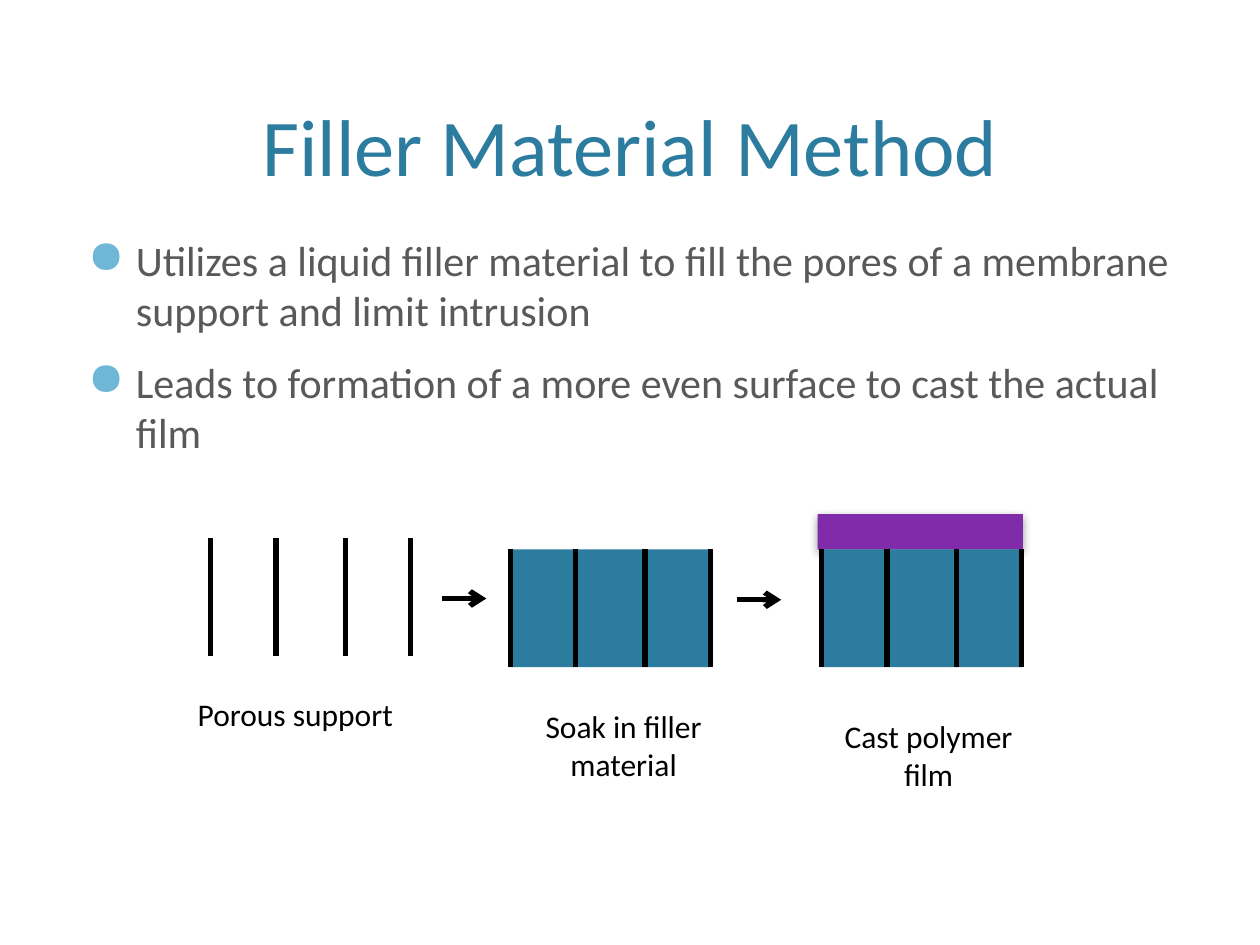
from dataclasses import dataclass

from lxml.etree import SubElement
from pptx import Presentation
from pptx.dml.color import RGBColor
from pptx.enum.shapes import MSO_CONNECTOR as Connector, MSO_SHAPE as Shape
from pptx.enum.text import MSO_ANCHOR as Anchor, PP_ALIGN as Align
from pptx.oxml import parse_xml
from pptx.oxml.ns import nsdecls, qn
from pptx.util import Inches, Pt


@dataclass(frozen=True)
class Theme:
    font: str = "Calibri"
    teal: str = "2C7C9F"
    purple: str = "7F2BAA"
    gray: str = "595959"
    black: str = "000000"
    bullet: str = "6FB7D7"
    title_size: int = 46
    body_size: int = 24
    label_size: int = 18
    line_width: int = 3


theme = Theme()
presentation = Presentation()
presentation.slide_width, presentation.slide_height = Inches(10), Inches(7.5)
slide = presentation.slides.add_slide(presentation.slide_layouts[6])

# The slide is a grid of 100 columns by 75 rows.
COLUMN = presentation.slide_width / 100
ROW = presentation.slide_height / 75


def add_text(box, texts, size, color, align=Align.LEFT, anchor=Anchor.TOP):
    """Put one paragraph per text in a box given as left, top, width, height in grid cells."""
    left, top, width, height = box
    shape = slide.shapes.add_textbox(
        int(left * COLUMN), int(top * ROW), int(width * COLUMN), int(height * ROW))
    frame = shape.text_frame
    frame.word_wrap = True
    frame.vertical_anchor = anchor
    for index, text in enumerate(texts):
        paragraph = frame.paragraphs[0] if index == 0 else frame.add_paragraph()
        paragraph.alignment = align
        run = paragraph.add_run()
        run.text = text
        run.font.name = theme.font
        run.font.size = Pt(size)
        run.font.color.rgb = RGBColor.from_string(color)
    return frame


def add_line(start_column, start_row, end_column, end_row, arrow=False):
    connector = slide.shapes.add_connector(
        Connector.STRAIGHT,
        int(start_column * COLUMN), int(start_row * ROW),
        int(end_column * COLUMN), int(end_row * ROW))
    connector.line.color.rgb = RGBColor.from_string(theme.black)
    connector.line.width = Pt(theme.line_width)
    if arrow:
        SubElement(connector.line._get_or_add_ln(), qn("a:tailEnd"), type="arrow")
    SubElement(connector._element.spPr, qn("a:effectLst"))


# Title and bullets
add_text((6, 1.2, 88, 14.6), ["Filler Material Method"],
         theme.title_size, theme.teal, Align.CENTER, Anchor.BOTTOM)
body = add_text((6, 18.1, 88, 46.8), [
    "Utilizes a liquid filler material to fill the pores of a membrane support and limit intrusion",
    "Leads to formation of a more even surface to cast the actual film",
], theme.body_size, theme.gray)
for paragraph in body.paragraphs:
    paragraph.space_before = Pt(theme.body_size / 2)
    properties = paragraph._p.get_or_add_pPr()
    indent = Inches(0.38)
    properties.set("marL", str(indent))
    properties.set("indent", str(-indent))
    bullet_color = SubElement(properties, qn("a:buClr"))
    SubElement(bullet_color, qn("a:srgbClr"), val=theme.bullet)
    SubElement(properties, qn("a:buSzPct"), val="110000")
    SubElement(properties, qn("a:buChar"), char="●")

# Three stages: bare support, support with filler, filled support under a film
PORE_WALLS = (0, 5.2, 10.7, 15.9)
SUPPORT_WIDTH = PORE_WALLS[-1]
SUPPORT_HEIGHT = 9.35
FILM_HEIGHT, FILM_OVERHANG = 2.8, 0.3
stages = [
    (16.7, 42.7, False, False),
    (40.5, 43.6, True, False),
    (65.2, 43.6, True, True),
]
for left, top, has_filler, has_film in stages:
    layers = []
    if has_film:
        layers.append((left - FILM_OVERHANG, top - FILM_HEIGHT,
                       SUPPORT_WIDTH + 1.3 * FILM_OVERHANG, FILM_HEIGHT, theme.purple))
    if has_filler:
        layers.append((left, top, SUPPORT_WIDTH, SUPPORT_HEIGHT, theme.teal))
    for layer_left, layer_top, width, height, color in layers:
        layer = slide.shapes.add_shape(
            Shape.RECTANGLE, int(layer_left * COLUMN), int(layer_top * ROW),
            int(width * COLUMN), int(height * ROW))
        layer.shadow.inherit = False
        layer.fill.solid()
        layer.fill.fore_color.rgb = RGBColor.from_string(color)
        layer.line.fill.background()
        if color == theme.purple:
            layer._element.spPr.find(qn("a:effectLst")).append(parse_xml(
                f'<a:outerShdw {nsdecls("a")} blurRad="{Pt(5)}" dist="{Pt(2)}"'
                f' dir="5400000" rotWithShape="0"><a:srgbClr val="{theme.black}">'
                '<a:alpha val="40000"/></a:srgbClr></a:outerShdw>'))
    for wall in PORE_WALLS:
        add_line(left + wall, top, left + wall, top + SUPPORT_HEIGHT)

# Stage labels
for box, label, align in [
    ((14.7, 54.7, 20.5, 4), "Porous support", Align.LEFT),
    ((40.5, 55.6, 18, 7.1), "Soak in filler material", Align.CENTER),
    ((64.2, 56.4, 19, 7.1), "Cast polymer film", Align.CENTER),
]:
    add_text(box, [label], theme.label_size, theme.black, align)

# Arrows between the stages
ARROW_LENGTH = 3.5
for left, row in [(35.1, 47.5), (58.5, 47.6)]:
    add_line(left, row, left + ARROW_LENGTH, row, arrow=True)

presentation.save("out.pptx")
